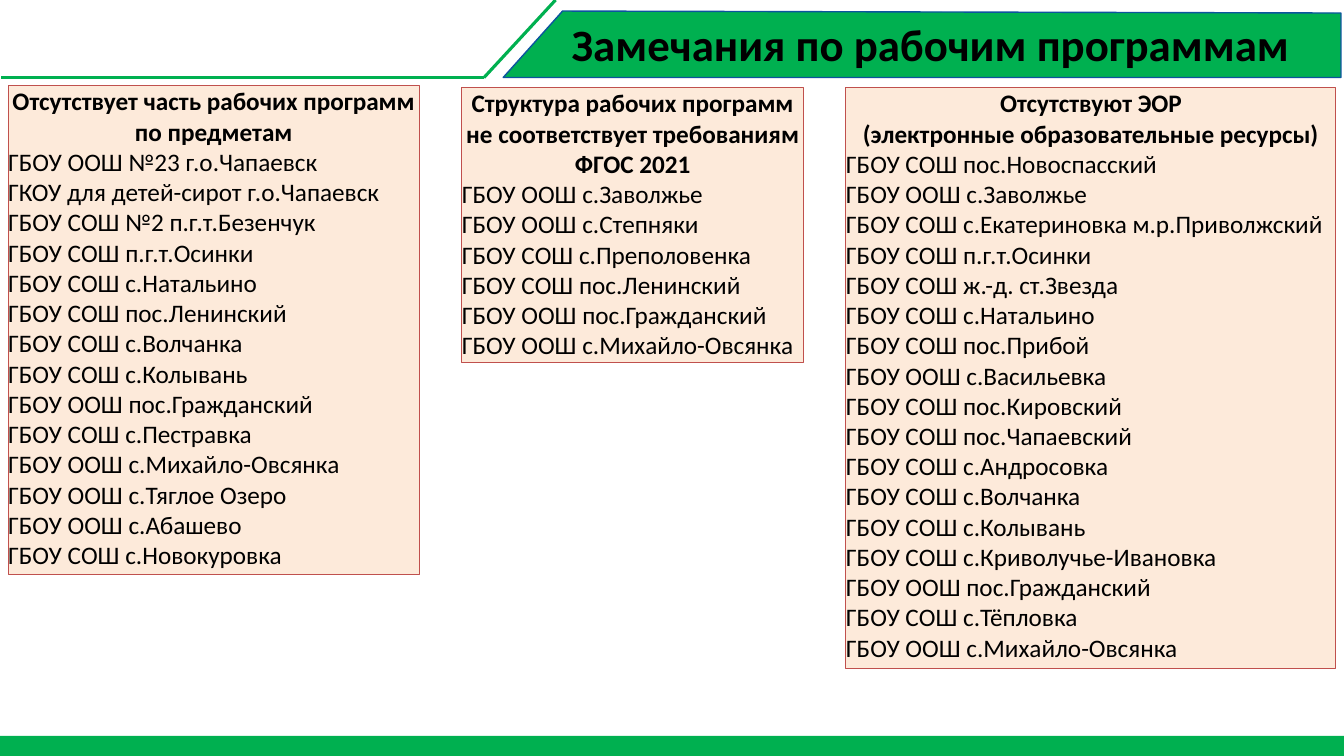
from pptx import Presentation
from pptx.dml.color import RGBColor
from pptx.enum.shapes import MSO_CONNECTOR, MSO_SHAPE
from pptx.enum.text import MSO_ANCHOR, MSO_AUTO_SIZE, PP_ALIGN
from pptx.oxml.ns import qn
from pptx.util import Inches, Pt
from lxml import etree

TITLE = "Замечания по рабочим программам"
FONT = "Calibri"
COLORS = {
    "green": "00B050",
    "blue": "0C549E",
    "panel": "FDEADA",
    "border": "C0504D",
    "text": "000000",
}

# Panels: box (left, top, width, height), heading lines, schools
PANELS = [
    {
        "box": (0.08, 0.85, 4.08, 4.85),
        "heading": ["Отсутствует часть рабочих программ по предметам"],
        "schools": [
            "ГБОУ ООШ №23 г.о.Чапаевск",
            "ГКОУ для детей-сирот г.о.Чапаевск",
            "ГБОУ СОШ №2 п.г.т.Безенчук",
            "ГБОУ СОШ п.г.т.Осинки",
            "ГБОУ СОШ с.Натальино",
            "ГБОУ СОШ пос.Ленинский",
            "ГБОУ СОШ с.Волчанка",
            "ГБОУ СОШ с.Колывань",
            "ГБОУ ООШ пос.Гражданский",
            "ГБОУ СОШ с.Пестравка",
            "ГБОУ ООШ с.Михайло-Овсянка",
            "ГБОУ ООШ с.Тяглое Озеро",
            "ГБОУ ООШ с.Абашево",
            "ГБОУ СОШ с.Новокуровка",
        ],
    },
    {
        "box": (8.39, 0.87, 4.86, 5.76),
        "heading": ["Отсутствуют ЭОР", "(электронные образовательные ресурсы)"],
        "schools": [
            "ГБОУ СОШ пос.Новоспасский",
            "ГБОУ ООШ с.Заволжье",
            "ГБОУ СОШ с.Екатериновка м.р.Приволжский",
            "ГБОУ СОШ п.г.т.Осинки",
            "ГБОУ СОШ ж.-д. ст.Звезда",
            "ГБОУ СОШ с.Натальино",
            "ГБОУ СОШ пос.Прибой",
            "ГБОУ ООШ с.Васильевка",
            "ГБОУ СОШ пос.Кировский",
            "ГБОУ СОШ пос.Чапаевский",
            "ГБОУ СОШ с.Андросовка",
            "ГБОУ СОШ с.Волчанка",
            "ГБОУ СОШ с.Колывань",
            "ГБОУ СОШ с.Криволучье-Ивановка",
            "ГБОУ ООШ пос.Гражданский",
            "ГБОУ СОШ с.Тёпловка",
            "ГБОУ ООШ с.Михайло-Овсянка",
        ],
    },
    {
        "box": (4.58, 0.87, 3.39, 2.73),
        "heading": ["Структура рабочих программ не соответствует требованиям ФГОС 2021"],
        "schools": [
            "ГБОУ ООШ с.Заволжье",
            "ГБОУ ООШ с.Степняки",
            "ГБОУ СОШ с.Преполовенка",
            "ГБОУ СОШ пос.Ленинский",
            "ГБОУ ООШ пос.Гражданский",
            "ГБОУ ООШ с.Михайло-Овсянка",
        ],
    },
]

BANNER = [(5.58, 0.11), (13.3, 0.13), (13.3, 0.77), (4.99, 0.77)]
HEADER_LINES = [((5.51, 0), (4.8, 0.77)), ((4.8, 0.77), (0.01, 0.77))]


def color(name):
    return RGBColor.from_string(COLORS[name])


def paint(shape, fill, line=None, width=1):
    shape.shadow.inherit = False
    shape.fill.solid()
    shape.fill.fore_color.rgb = color(fill)
    if line:
        shape.line.color.rgb = color(line)
        shape.line.width = Pt(width)
    else:
        shape.line.fill.background()


def prepare_frame(shape):
    frame = shape.text_frame
    frame.word_wrap = True
    frame.auto_size = MSO_AUTO_SIZE.NONE
    frame.vertical_anchor = MSO_ANCHOR.TOP
    frame.margin_left = frame.margin_right = 0
    frame.margin_top = frame.margin_bottom = 0
    return frame


def write(paragraph, text, size, bold, alignment=PP_ALIGN.LEFT):
    paragraph.alignment = alignment
    run = paragraph.add_run()
    run.text = text
    run.font.name = FONT
    run.font.size = Pt(size)
    run.font.bold = bold
    run.font.color.rgb = color("text")


def add_panel(slide, panel):
    box = [Inches(value) for value in panel["box"]]
    shape = slide.shapes.add_shape(MSO_SHAPE.RECTANGLE, *box)
    paint(shape, "panel", "border", 0.75)
    frame = prepare_frame(shape)
    lines = [(text, True, PP_ALIGN.CENTER) for text in panel["heading"]]
    lines += [(text, False, PP_ALIGN.LEFT) for text in panel["schools"]]
    for index, (text, bold, alignment) in enumerate(lines):
        paragraph = frame.add_paragraph() if index else frame.paragraphs[0]
        write(paragraph, text, 18, bold, alignment)


def main():
    presentation = Presentation()
    presentation.slide_width = Inches(13.33)
    presentation.slide_height = Inches(7.5)
    slide = presentation.slides.add_slide(presentation.slide_layouts[5])
    shapes = slide.shapes

    # Title banner
    points = [(Inches(x), Inches(y)) for x, y in BANNER]
    builder = shapes.build_freeform(*points[0])
    builder.add_line_segments(points[1:], close=True)
    paint(builder.convert_to_shape(), "green", "blue")

    # Footer bar
    footer = shapes.add_shape(MSO_SHAPE.RECTANGLE, 0, Inches(7.3), Inches(13.33), Inches(0.2))
    paint(footer, "green")

    # Header lines
    for start, end in HEADER_LINES:
        ends = [Inches(value) for value in start + end]
        connector = shapes.add_connector(MSO_CONNECTOR.STRAIGHT, *ends)
        connector.line.color.rgb = color("green")
        connector.line.width = Pt(2.25)
        etree.SubElement(connector._element.spPr, qn("a:effectLst"))

    # Title, brought in front of the banner
    title = shapes.title
    title.left, title.top = Inches(5.67), Inches(0.17)
    title.width, title.height = Inches(7.58), Inches(0.54)
    write(prepare_frame(title).paragraphs[0], TITLE, 32, True)
    shapes._spTree.append(title._element)

    # Panels with schools
    for panel in PANELS:
        add_panel(slide, panel)

    presentation.save("out.pptx")


if __name__ == "__main__":
    main()
